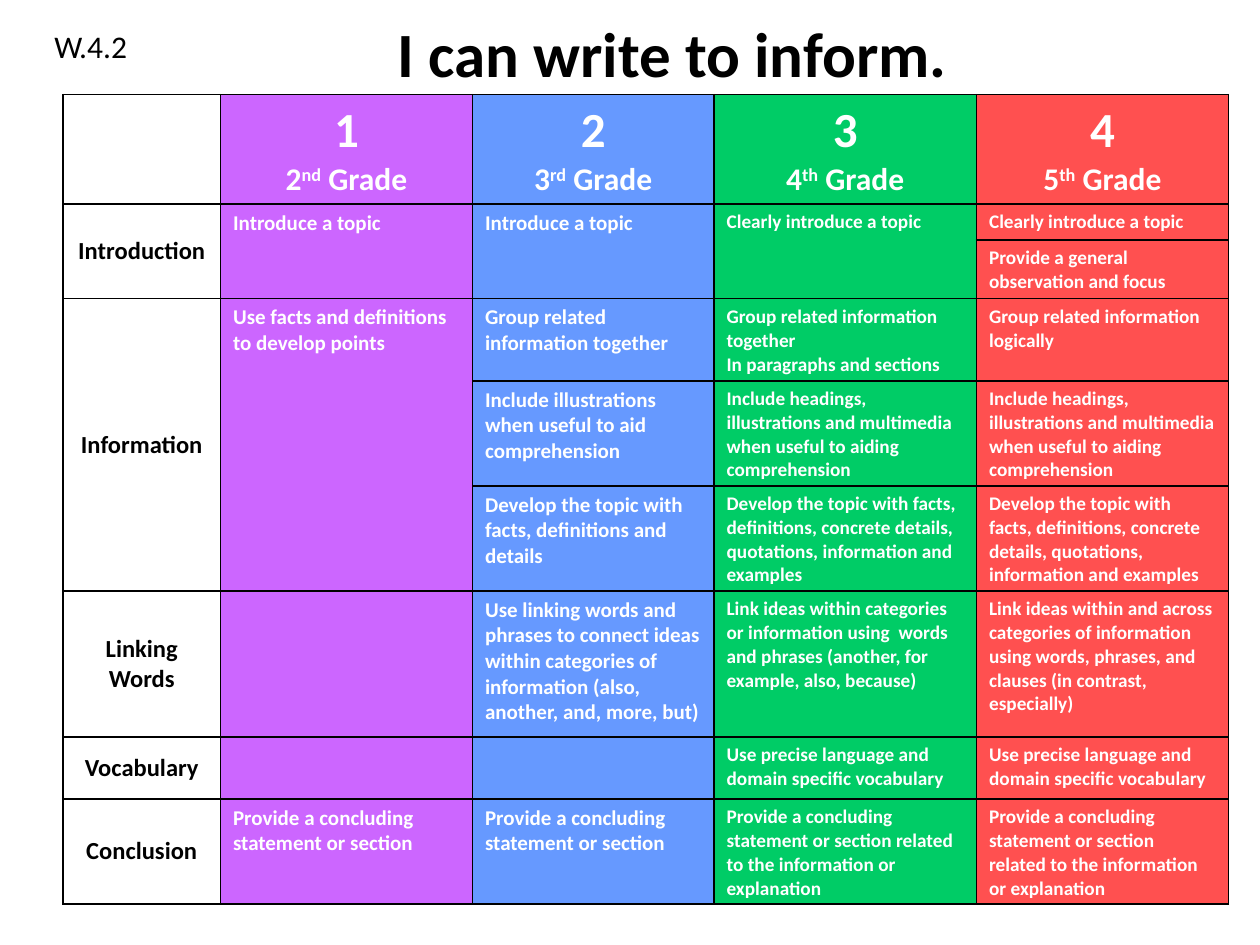
"""Build a writing rubric slide: a title, a standard code and a grade-level table."""
from dataclasses import dataclass

from lxml.etree import SubElement
from pptx import Presentation
from pptx.dml.color import RGBColor
from pptx.enum.text import MSO_ANCHOR as Anchor, PP_ALIGN as Align
from pptx.oxml.ns import qn
from pptx.util import Pt

BLACK, WHITE = "000000", "FFFFFF"
ROW_HEIGHTS = [62.6, 20, 33.7, 46.9, 60, 60, 83.5, 35.4, 60]
LABEL_WIDTH = 90


@dataclass
class Entry:
    row: int
    text: str
    span: int = 1


@dataclass
class Level:
    grade: str
    suffix: str
    fill: str
    width: float
    size: float
    entries: list[Entry]


HEADINGS = "Include headings, illustrations and multimedia when useful to aiding comprehension"
DETAILS = ("Develop the topic with facts, definitions, concrete details, quotations, "
           "information and examples")
PRECISE = "Use precise language and domain specific vocabulary"
CLOSING = "Provide a concluding statement or section"
FULL_CLOSING = ("Provide a concluding  statement or section related to the information "
                "or explanation")

LABELS = [
    Entry(1, "Introduction", 2),
    Entry(3, "Information", 3),
    Entry(6, "Linking Words"),
    Entry(7, "Vocabulary"),
    Entry(8, "Conclusion"),
]

LEVELS = [
    Level("2", "nd", "CC66FF", 144, 12, [
        Entry(1, "Introduce a topic", 2),
        Entry(3, "Use facts and definitions to develop points", 3),
        Entry(8, CLOSING),
    ]),
    Level("3", "rd", "6699FF", 138, 12, [
        Entry(1, "Introduce a topic", 2),
        Entry(3, "Group related information together"),
        Entry(4, "Include illustrations when useful to aid comprehension"),
        Entry(5, "Develop the topic with facts, definitions and details"),
        Entry(6, "Use linking words and phrases to connect ideas within categories of "
                 "information (also, another, and, more, but)"),
        Entry(8, CLOSING),
    ]),
    Level("4", "th", "00CC66", 150, 11, [
        Entry(1, "Clearly introduce a topic", 2),
        Entry(3, "Group related information together\nIn paragraphs and sections"),
        Entry(4, HEADINGS),
        Entry(5, DETAILS),
        Entry(6, "Link ideas within categories  or information using  words and phrases "
                 "(another, for example, also, because)"),
        Entry(7, PRECISE),
        Entry(8, FULL_CLOSING),
    ]),
    Level("5", "th", "FF5050", 144, 11, [
        Entry(1, "Clearly introduce a topic"),
        Entry(2, "Provide a general observation and focus"),
        Entry(3, "Group related information logically"),
        Entry(4, HEADINGS),
        Entry(5, DETAILS),
        Entry(6, "Link ideas within and across categories of information using words, "
                 "phrases, and clauses (in contrast, especially)"),
        Entry(7, PRECISE),
        Entry(8, FULL_CLOSING),
    ]),
]


def color(value: str) -> RGBColor:
    """Turn a hex string into a colour."""
    return RGBColor.from_string(value)


def add_span(para, text: str, size: float, ink: str, bold: bool = True):
    """Append one formatted run to a paragraph."""
    span = para.add_run()
    span.text = text
    for name, value in {"name": "Calibri", "size": Pt(size), "bold": bold}.items():
        setattr(span.font, name, value)
    span.font.color.rgb = color(ink)
    return span


def write(frame, text: str, size: float, ink: str, align=Align.LEFT, bold: bool = True) -> None:
    """Write each line of the text as a paragraph."""
    for index, line in enumerate(text.split("\n")):
        para = frame.add_paragraph() if index else frame.paragraphs[0]
        para.alignment = align
        add_span(para, line, size, ink, bold)


def draw_borders(cell) -> None:
    """Give a cell a black line on all four sides."""
    properties = cell._tc.get_or_add_tcPr()
    for side in ("lnL", "lnR", "lnT", "lnB"):
        line = SubElement(properties, qn(f"a:{side}"), w=str(Pt(1)))
        SubElement(SubElement(line, qn("a:solidFill")), qn("a:srgbClr"), val=BLACK)


def merge_down(table, entry: Entry, column: int):
    """Merge the rows that an entry spans and return its first cell."""
    cell = table.cell(entry.row, column)
    if entry.span > 1:
        cell.merge(table.cell(entry.row + entry.span - 1, column))
    return cell


def write_header(cell, number: int, level: Level) -> None:
    """Write the level number above its grade."""
    write(cell.text_frame, str(number), 28, WHITE, Align.CENTER)
    para = cell.text_frame.add_paragraph()
    para.alignment = Align.CENTER
    add_span(para, level.grade, 18, WHITE)
    raised = add_span(para, level.suffix, 18, WHITE)
    raised._r.get_or_add_rPr().set("baseline", "30000")
    add_span(para, " Grade", 18, WHITE)


def draw_level(table, column: int, level: Level) -> None:
    """Fill one grade column."""
    for row in range(len(ROW_HEIGHTS)):
        fill = table.cell(row, column).fill
        fill.solid()
        fill.fore_color.rgb = color(level.fill)
    write_header(table.cell(0, column), column, level)
    for entry in level.entries:
        cell = merge_down(table, entry, column)
        write(cell.text_frame, entry.text, level.size, WHITE)


def draw_table(page) -> None:
    """Add the rubric table."""
    widths = [LABEL_WIDTH] + [level.width for level in LEVELS]
    table = page.shapes.add_table(
        len(ROW_HEIGHTS), len(widths), Pt(36), Pt(54),
        Pt(sum(widths)), Pt(sum(ROW_HEIGHTS))).table
    for name in ("first_row", "horz_banding"):
        setattr(table, name, False)
    for column, width in zip(table.columns, widths):
        column.width = Pt(width)
    for row, height in zip(table.rows, ROW_HEIGHTS):
        row.height = Pt(height)
    for cell in table.iter_cells():
        draw_borders(cell)
        cell.fill.background()
    for label in LABELS:
        cell = merge_down(table, label, 0)
        cell.vertical_anchor = Anchor.MIDDLE
        write(cell.text_frame, label.text, 14, BLACK, Align.CENTER)
    for column, level in enumerate(LEVELS, 1):
        draw_level(table, column, level)


def main() -> None:
    """Build and save the deck."""
    deck = Presentation()
    deck.slide_width, deck.slide_height = Pt(720), Pt(540)
    page = deck.slides.add_slide(deck.slide_layouts[5])
    title = page.shapes.title
    place = {"left": 78, "top": -6, "width": 612, "height": 72}
    for name, value in place.items():
        setattr(title, name, Pt(value))
    title.text_frame.vertical_anchor = Anchor.MIDDLE
    write(title.text_frame, "I can write to inform.", 36, BLACK, Align.CENTER)
    box = page.shapes.add_textbox(Pt(24), Pt(12), Pt(102), Pt(29))
    box.text_frame.word_wrap = True
    write(box.text_frame, "W.4.2", 18, BLACK, bold=False)
    draw_table(page)
    deck.save("out.pptx")


if __name__ == "__main__":
    main()
